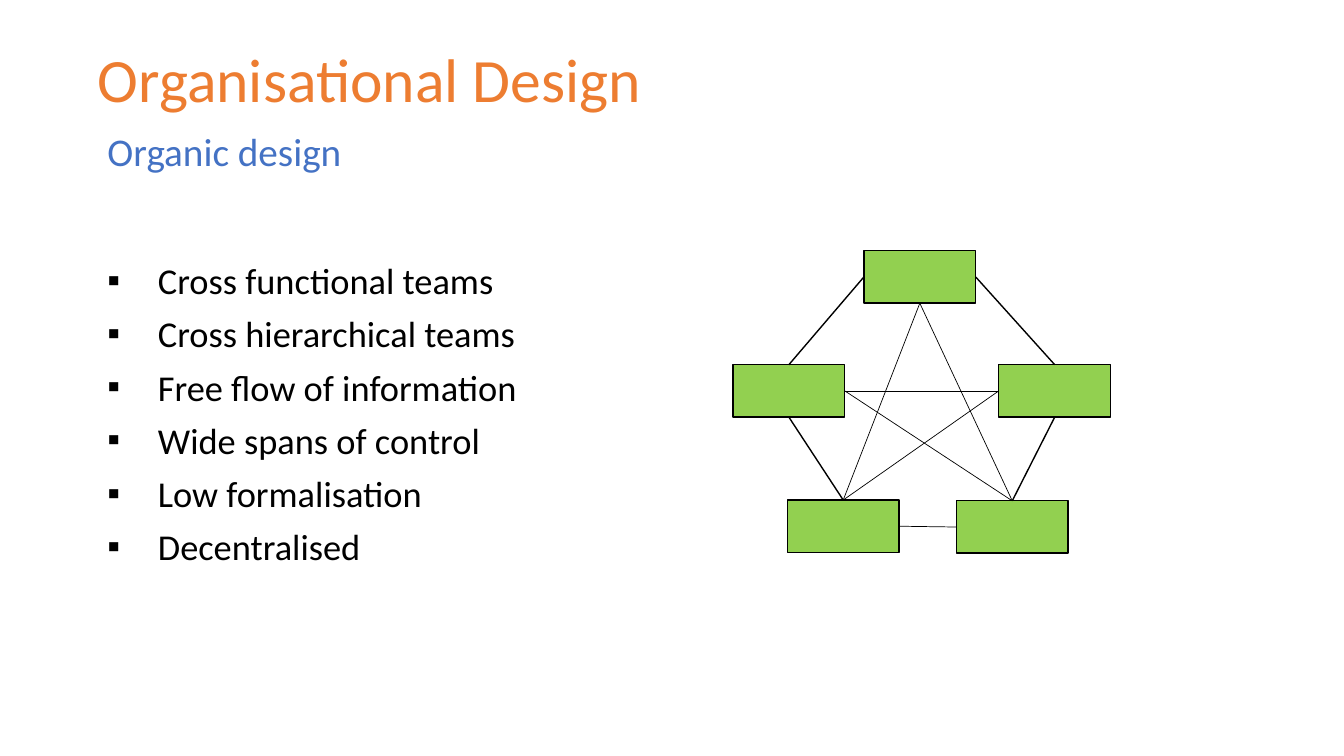
from lxml.etree import SubElement as Sub
from pptx import Presentation
from pptx.dml.color import RGBColor
from pptx.enum.shapes import MSO_CONNECTOR as Link, MSO_SHAPE as Form
from pptx.enum.text import MSO_ANCHOR as Anchor, MSO_AUTO_SIZE as Fit, PP_ALIGN as Align
from pptx.oxml.ns import qn
from pptx.util import Cm, Pt

TOP, LEFT, BOTTOM, RIGHT = range(4)
WIDE, HIGH = 2.82, 1.32


def color(code):
    return RGBColor.from_string(code)


class Board:
    font, ink, leaf = "Calibri", "000000", "92D050"

    def __init__(self, slide):
        self.slide = slide

    def fill(self, frame, text, size, ink=None, lead=0.8, gap=0.5, bullet=None):
        """Fill a frame, one paragraph per line; gap is a share of the size."""
        frame.word_wrap = True
        for i, line in enumerate(text.split("\n")):
            para = frame.add_paragraph() if i else frame.paragraphs[0]
            para.alignment = Align.LEFT
            para.line_spacing = lead
            para.space_before = Pt(size * gap if i else 0)
            run = para.add_run()
            run.text = line
            run.font.name, run.font.size = self.font, Pt(size)
            run.font.color.rgb = color(ink or self.ink)
            if bullet:
                props = para._p.get_or_add_pPr()
                props.set("marL", str(Cm(1.27)))
                props.set("indent", str(-Cm(1.27)))
                Sub(props, qn("a:buFont"), typeface="Arial")
                Sub(props, qn("a:buChar"), char=bullet)

    def title(self, text, x, y, w, h, **style):
        head = self.slide.shapes.title
        head.left, head.top, head.width, head.height = map(Cm, (x, y, w, h))
        frame = head.text_frame
        frame.auto_size = Fit.NONE
        frame.vertical_anchor = Anchor.MIDDLE
        self.fill(frame, text, **style)

    def text(self, text, x, y, w, h, **style):
        frame = self.slide.shapes.add_textbox(*map(Cm, (x, y, w, h))).text_frame
        frame.auto_size = Fit.SHAPE_TO_FIT_TEXT
        self.fill(frame, text, **style)

    def box(self, x, y):
        shape = self.slide.shapes.add_shape(
            Form.RECTANGLE, Cm(x), Cm(y), Cm(WIDE), Cm(HIGH))
        shape.shadow.inherit = False
        shape.fill.solid()
        shape.fill.fore_color.rgb = color(self.leaf)
        shape.line.color.rgb = color(self.ink)
        shape.line.width = Pt(1)
        return shape

    def join(self, start, side, end, port, width):
        line = self.slide.shapes.add_connector(Link.STRAIGHT, 0, 0, 0, 0)
        line.begin_connect(start, side)
        line.end_connect(end, port)
        line.line.color.rgb = color(self.ink)
        line.line.width = Pt(width)
        Sub(line._element.spPr, qn("a:effectLst"))


def main():
    deck = Presentation()
    deck.slide_width, deck.slide_height = Cm(33.87), Cm(19.05)
    board = Board(deck.slides.add_slide(deck.slide_layouts[5]))

    head = board.box(21.77, 6.32)
    east = board.box(25.17, 9.19)
    west = board.box(18.47, 9.19)
    right = board.box(24.1, 12.62)
    left = board.box(19.84, 12.6)

    rim = [
        (east, TOP, head, RIGHT),
        (west, TOP, head, LEFT),
        (left, TOP, west, BOTTOM),
        (right, TOP, east, BOTTOM),
    ]
    web = [
        (left, RIGHT, right, LEFT),
        (head, BOTTOM, left, TOP),
        (head, BOTTOM, right, TOP),
        (right, TOP, west, RIGHT),
        (left, TOP, east, LEFT),
        (west, RIGHT, east, LEFT),
    ]
    for links, width in ((rim, 1), (web, 0.5)):
        for link in links:
            board.join(*link, width)

    board.text("Organic design", 2.46, 3.3, 8.79, 1.24, size=28, ink="4472C4")
    board.text(
        "Cross functional teams\n"
        "Cross hierarchical teams\n"
        "Free flow of information\n"
        "Wide spans of control\n"
        "Low formalisation\n"
        "Decentralised",
        2.46, 6.6, 14.66, 8.38, size=26, bullet="▪")
    board.title("Organisational Design", 2.21, 0.91, 23.34, 2.34,
                size=44, ink="ED7D31", lead=0.9)
    deck.save("out.pptx")


if __name__ == "__main__":
    main()
